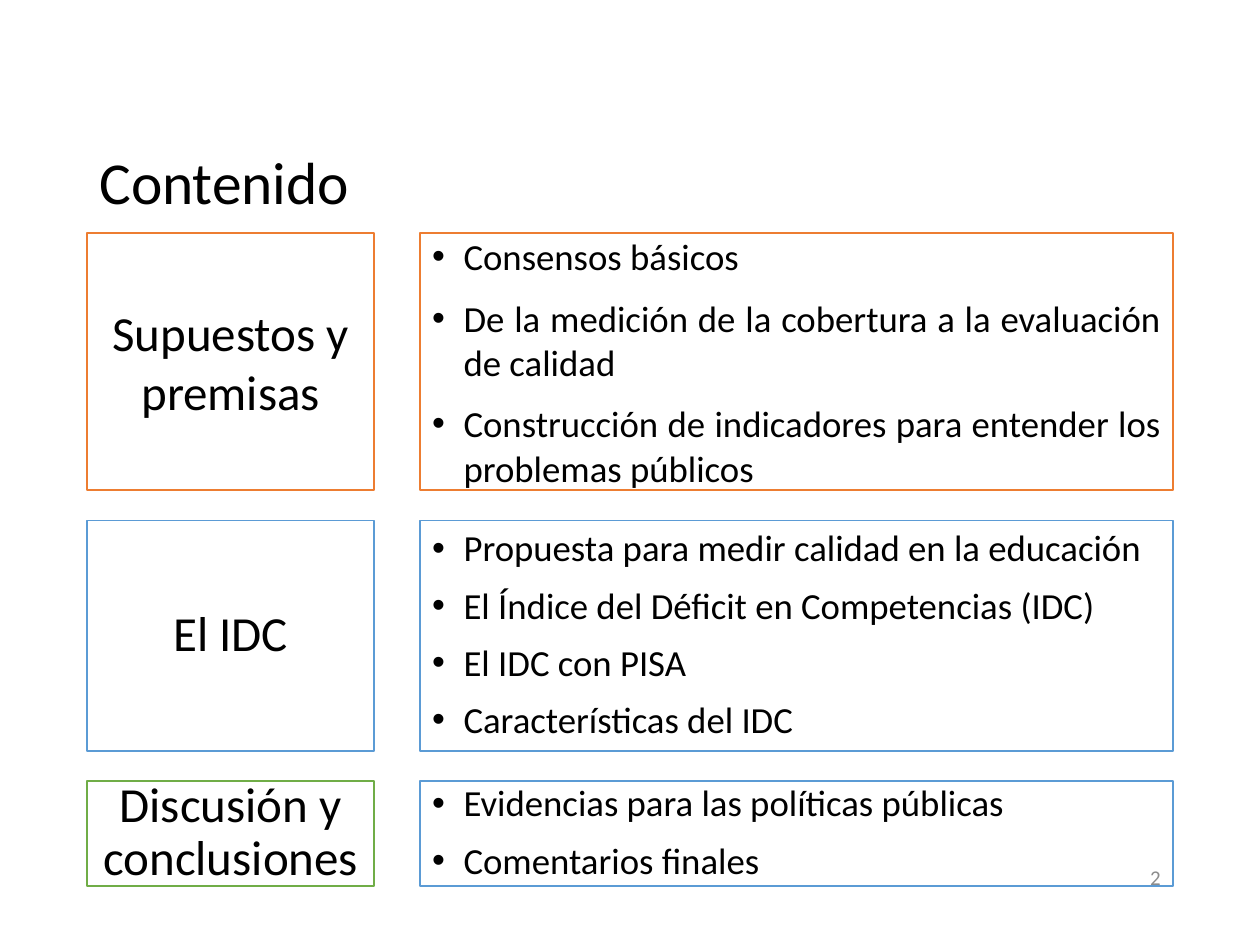
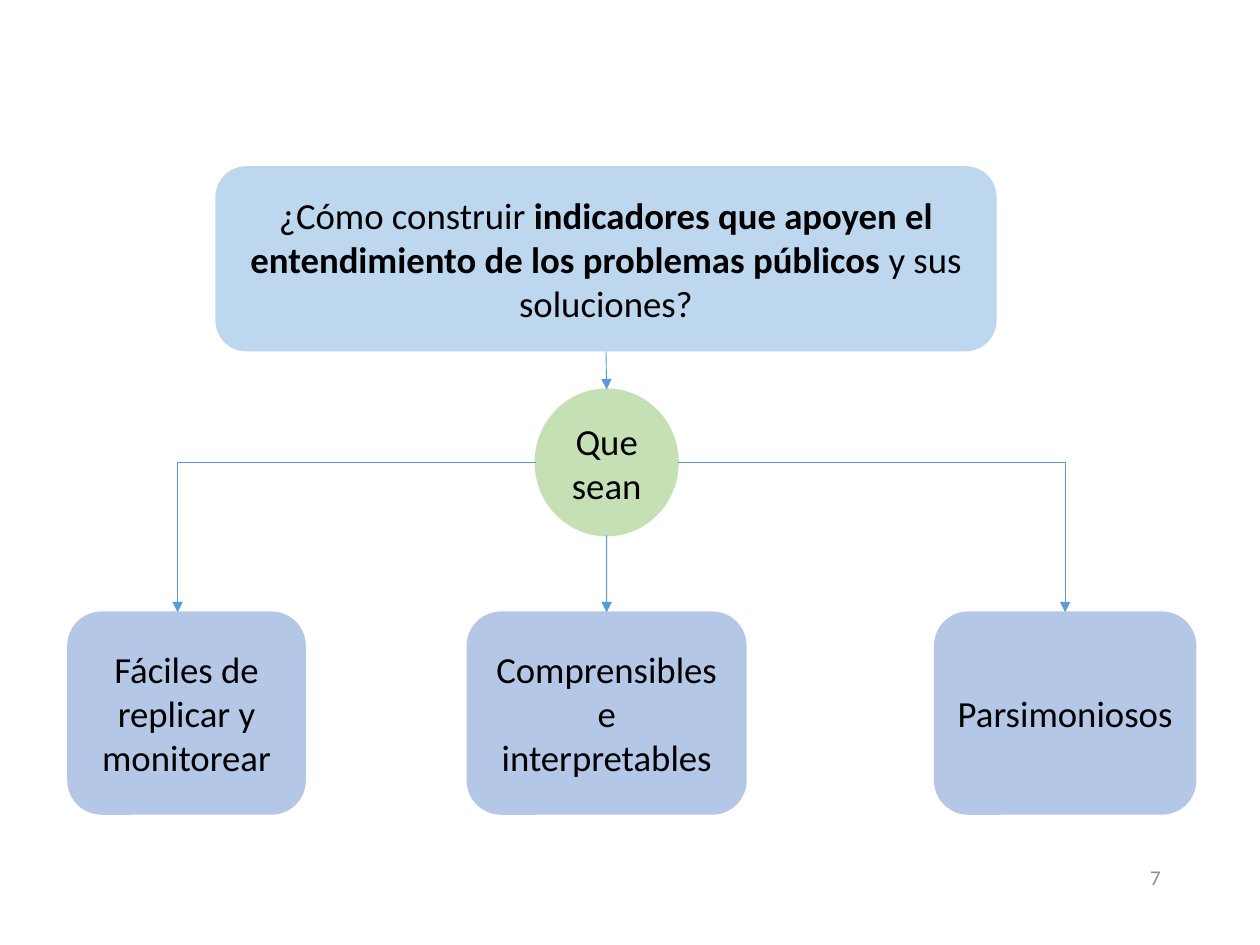
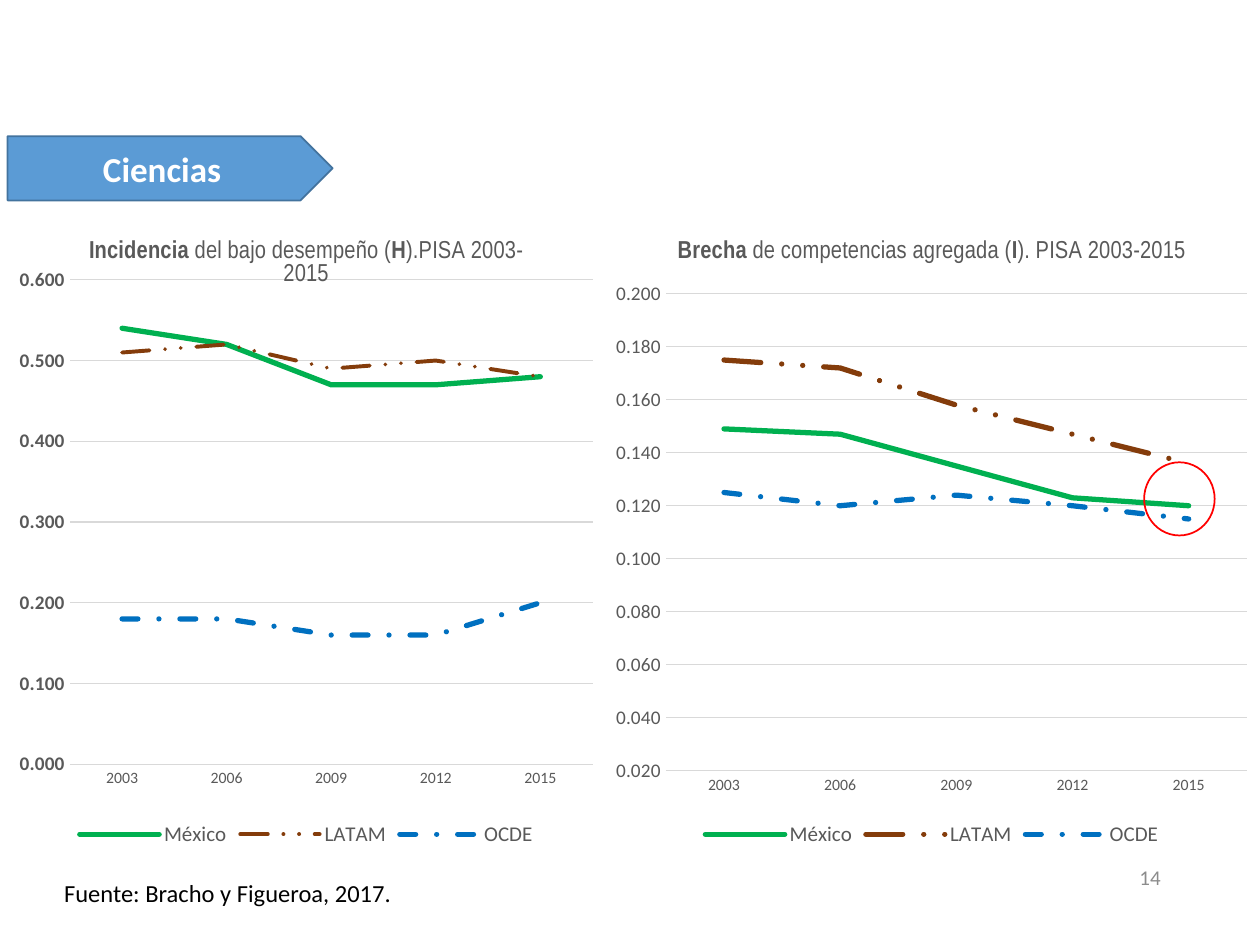
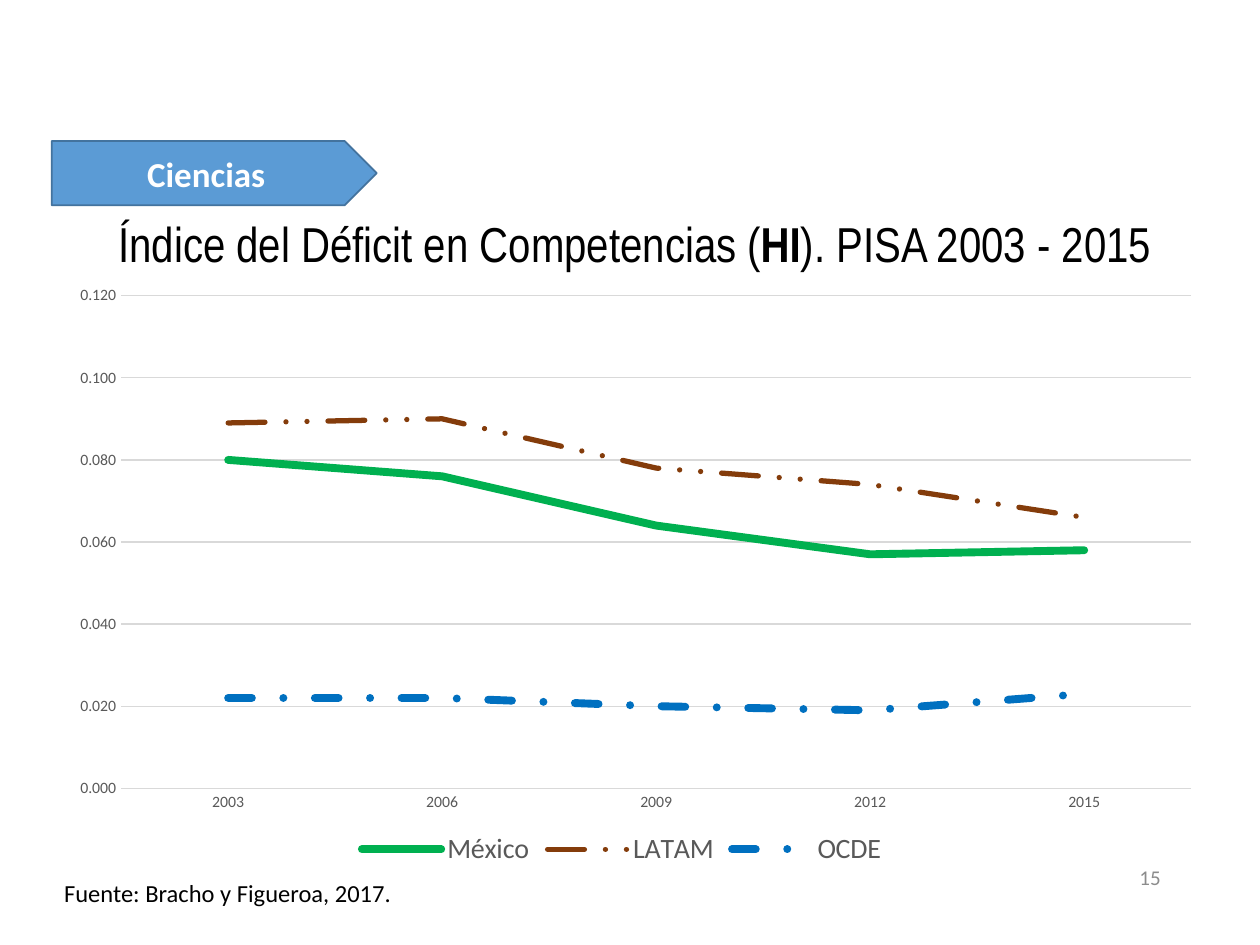
from lxml.etree import SubElement
from pptx import Presentation
from pptx.chart.data import CategoryChartData
from pptx.dml.color import RGBColor
from pptx.enum.chart import XL_CHART_TYPE, XL_LEGEND_POSITION, XL_TICK_MARK
from pptx.enum.dml import MSO_LINE
from pptx.enum.shapes import MSO_CONNECTOR, MSO_SHAPE as SHAPE
from pptx.enum.text import MSO_ANCHOR, PP_ALIGN as ALIGN
from pptx.oxml import parse_xml
from pptx.oxml.ns import nsdecls, qn
from pptx.util import Pt

rgb = RGBColor.from_string

BLACK, WHITE, GRAY, GRID = "000000", "FFFFFF", "595959", "D9D9D9"
BLUE, ORANGE, GREEN = "5B9BD5", "ED7D31", "70AD47"
BODY, NARROW = "Calibri", "Arial Narrow"


def place(slide, kind, frame, fill=None, line=None, width=1):
    """Add a preset shape, or a text box when kind is None, and return it."""
    frame = [Pt(value) for value in frame]
    if kind is None:
        shape = slide.shapes.add_textbox(*frame)
    else:
        shape = slide.shapes.add_shape(kind, *frame)
        shape.shadow.inherit = False
        if fill:
            shape.fill.solid()
            shape.fill.fore_color.rgb = rgb(fill)
        else:
            shape.fill.background()
        if line:
            shape.line.color.rgb = rgb(line)
            shape.line.width = Pt(width)
        else:
            shape.line.fill.background()
    shape.text_frame.word_wrap = True
    shape.text_frame.vertical_anchor = MSO_ANCHOR.MIDDLE
    return shape


def write(text_frame, texts, size, color=BLACK, face=BODY, align=ALIGN.CENTER,
          spacing=None, bullet=False):
    """Write one paragraph per text; parts between asterisks are bold."""
    for number, text in enumerate(texts):
        paragraph = text_frame.add_paragraph() if number else text_frame.paragraphs[0]
        paragraph.alignment = align
        if spacing:
            paragraph.line_spacing = spacing
        if number:
            paragraph.space_before = Pt(10)
        if bullet:
            properties = paragraph._p.get_or_add_pPr()
            properties.set("marL", str(Pt(18)))
            properties.set("indent", str(-Pt(18)))
            SubElement(properties, qn("a:buFont"), typeface="Arial")
            SubElement(properties, qn("a:buChar"), char="•")
        paragraph.font.name = face
        paragraph.font.size = Pt(size)
        paragraph.font.color.rgb = rgb(color)
        for part, words in enumerate(text.split("*")):
            if words:
                run = paragraph.add_run()
                run.text = words
                run.font.bold = part % 2 == 1


deck = Presentation()
deck.slide_width, deck.slide_height = Pt(720), Pt(540)
contents, criteria, science, science_index = [
    deck.slides.add_slide(deck.slide_layouts[6]) for _ in range(4)]

# Titles
for slide, frame, title, size, face in (
        (contents, (49.7, 78.5, 620.6, 54.7), "Contenido", 34, BODY),
        (science_index, (60.5, 123.8, 620.6, 33.8),
         "Índice del Déficit en Competencias (*HI*). PISA 2003 - 2015", 28, NARROW)):
    heading = place(slide, None, frame)
    write(heading.text_frame, [title], size, face=face, align=ALIGN.LEFT, spacing=0.9)

# Contents: a topic and its points in each row
for top, height, topic, topic_line, topic_spacing, points, points_line, points_spacing in (
        (133.2, 146.9, "Supuestos y premisas", ORANGE, None,
         ["Consensos básicos",
          "De la medición de la cobertura a la evaluación de calidad",
          "Construcción de indicadores para entender los problemas públicos"], ORANGE, None),
        (297.4, 131.8, "El IDC", BLUE, 0.9,
         ["Propuesta para medir calidad en la educación",
          "El Índice del Déficit en Competencias (IDC)",
          "El IDC con PISA",
          "Características del IDC"], BLUE, 0.9),
        (446.4, 59.8, "Discusión y conclusiones", GREEN, 0.9,
         ["Evidencias para las políticas públicas",
          "Comentarios finales"], BLUE, 0.9)):
    topic_box = place(contents, SHAPE.RECTANGLE, (49.7, top, 164.2, height), WHITE, topic_line)
    write(topic_box.text_frame, [topic], 28, spacing=topic_spacing)
    points_box = place(contents, SHAPE.RECTANGLE, (239.8, top, 430.6, height),
                       WHITE, points_line)
    write(points_box.text_frame, points, 21, align=ALIGN.JUSTIFY,
          spacing=points_spacing, bullet=True)

# Criteria: a question that leads to three qualities
question = place(criteria, SHAPE.ROUNDED_RECTANGLE, (123.1, 95, 446.4, 105.8), "BDD7EE")
write(question.text_frame,
      ["¿Cómo construir *indicadores que apoyen el entendimiento de los problemas "
       "públicos* y sus soluciones?"], 21)
hub = place(criteria, SHAPE.OVAL, (306, 222.5, 81.4, 83.5), "C5E0B4", "C5E0B4")
write(hub.text_frame, ["Que sean"], 21)

qualities = []
for left, width, quality in (
        (38.9, 135.4, "Fáciles de replicar y monitorear"),
        (267.1, 159.1, "Comprensibles e interpretables"),
        (534.2, 149, "Parsimoniosos")):
    box = place(criteria, SHAPE.ROUNDED_RECTANGLE, (left, 349.9, width, 115.2),
                "B4C7E7", "B4C7E7")
    write(box.text_frame, [quality], 21)
    qualities.append(box)
easy, clear, sparing = qualities

for ends, start, target, arrow in (
        ((346.3, 200.8, 346.7, 222.5), question, hub, True),
        ((101.5, 264.2, 306, 264.2), None, None, False),
        ((387.4, 264.2, 608.7, 264.2), None, None, False),
        ((101.5, 264.2, 101.5, 349.9), None, None, True),
        ((608.7, 264.2, 608.7, 349.9), None, sparing, True),
        ((346.7, 306, 346.7, 349.9), None, clear, True)):
    link = criteria.shapes.add_connector(
        MSO_CONNECTOR.STRAIGHT, *[Pt(value) for value in ends])
    if start:
        link.begin_connect(start, 2)
    if target:
        link.end_connect(target, 0)
    link.line.color.rgb = rgb(BLUE)
    link.line.width = Pt(0.5)
    if arrow:
        SubElement(link.line._get_or_add_ln(), qn("a:tailEnd"), type="triangle")
    SubElement(link._element.spPr, qn("a:effectLst"))

# Line charts
YEARS = ["2003", "2006", "2009", "2012", "2015"]
REGIONS = (("México", "00B050", None),
           ("LATAM", "843C0B", MSO_LINE.DASH_DOT_DOT),
           ("OCDE", "0070C0", MSO_LINE.DASH_DOT))
for slide, frame, title, plot_area, scale, value_size, value_bold, legend_size, widths, rows in (
        (science, (344.9, 122.4, 375.1, 364.3),
         "*Brecha* de competencias agregada (*I*). PISA 2003-2015",
         (0.095, 0.125, 0.885, 0.748), (0.02, 0.2, 0.02), 11, False, 12, (3, 3, 3),
         ((0.149, 0.147, 0.135, 0.123, 0.12),
          (0.175, 0.172, 0.158, 0.147, 0.136),
          (0.125, 0.12, 0.124, 0.12, 0.115))),
        (science, (0, 122.4, 349.9, 364.3),
         "*Incidencia* del bajo desempeño (*H*).PISA 2003- 2015",
         (0.114, 0.103, 0.854, 0.76), (0, 0.6, 0.1), 11, True, 12, (3, 2.25, 3),
         ((0.54, 0.52, 0.47, 0.47, 0.48),
          (0.51, 0.52, 0.49, 0.5, 0.48),
          (0.18, 0.18, 0.16, 0.16, 0.2))),
        (science_index, (29.5, 149.8, 651.6, 348.5), None,
         (0.061, 0.055, 0.939, 0.808), (0, 0.12, 0.02), 9, False, 16, (4.5, 3, 4.5),
         ((0.08, 0.076, 0.064, 0.057, 0.058),
          (0.089, 0.09, 0.078, 0.074, 0.066),
          (0.022, 0.022, 0.02, 0.019, 0.023)))):
    data = CategoryChartData(number_format="0.000")
    data.categories = YEARS
    for (region, _, _), values in zip(REGIONS, rows):
        data.add_series(region, values)
    chart = slide.shapes.add_chart(
        XL_CHART_TYPE.LINE, *[Pt(value) for value in frame], data).chart
    chart.font.name, chart.font.size = BODY, Pt(10)
    chart.font.color.rgb = rgb(BLACK)

    chart.has_title = title is not None
    if title:
        write(chart.chart_title.text_frame, [title], 14, GRAY, NARROW)
        chart.chart_title.include_in_layout = False

    chart.has_legend = True
    chart.legend.position = XL_LEGEND_POSITION.BOTTOM
    chart.legend.include_in_layout = False
    years, levels = chart.category_axis, chart.value_axis
    for font, size in ((chart.legend.font, legend_size),
                       (years.tick_labels.font, 9),
                       (levels.tick_labels.font, value_size)):
        font.name, font.size = BODY, Pt(size)
        font.color.rgb = rgb(GRAY)
    levels.tick_labels.font.bold = value_bold

    for axis in (years, levels):
        axis.major_tick_mark = axis.minor_tick_mark = XL_TICK_MARK.NONE
    levels.minimum_scale, levels.maximum_scale, levels.major_unit = scale
    levels.tick_labels.number_format = "0.000"
    levels.tick_labels.number_format_is_linked = False
    levels.has_major_gridlines = True
    levels.format.line.fill.background()
    for rule in (years.format.line, levels.major_gridlines.format.line):
        rule.color.rgb = rgb(GRID)
        rule.width = Pt(0.75)

    plot = chart.plots[0]
    plot.vary_by_categories = False
    for series, (_, color, dash), width in zip(plot.series, REGIONS, widths):
        series.smooth = False
        series.format.line.color.rgb = rgb(color)
        series.format.line.width = Pt(width)
        if dash:
            series.format.line.dash_style = dash
        series.format.line._get_or_add_ln().set("cap", "rnd")

    area = chart.element.xpath("c:chart/c:plotArea")[0]
    for automatic in area.xpath("c:layout"):
        area.remove(automatic)
    x, y, w, h = plot_area
    area.insert(0, parse_xml(
        f'<c:layout {nsdecls("c")}><c:manualLayout><c:layoutTarget val="inner"/>'
        f'<c:xMode val="edge"/><c:yMode val="edge"/><c:x val="{x}"/><c:y val="{y}"/>'
        f'<c:w val="{w}"/><c:h val="{h}"/></c:manualLayout></c:layout>'))

# Subject banner and source of the chart slides
for slide, left, top in ((science, 4.3, 77.8), (science_index, 29.5, 80.6)):
    banner = place(slide, SHAPE.PENTAGON, (left, top, 185.8, 36.7), BLUE, "43739E")
    write(banner.text_frame, ["*Ciencias*"], 20, WHITE)
    source = place(slide, None, (29.5, 498.2, 203, 24.5))
    source.text_frame.word_wrap = False
    source.text_frame.vertical_anchor = MSO_ANCHOR.TOP
    write(source.text_frame, ["Fuente: Bracho y Figueroa, 2017."], 14, align=ALIGN.LEFT)

place(science, SHAPE.OVAL, (653.8, 264.2, 40.3, 41.8), line="FF0000")

# Page numbers
for slide, page in zip(deck.slides, ("2", "7", "14", "15")):
    footer = place(slide, None, (508.3, 486.7, 162, 28.8))
    write(footer.text_frame, [page], 12, "8C8C8C", align=ALIGN.RIGHT)

deck.save("out.pptx")
